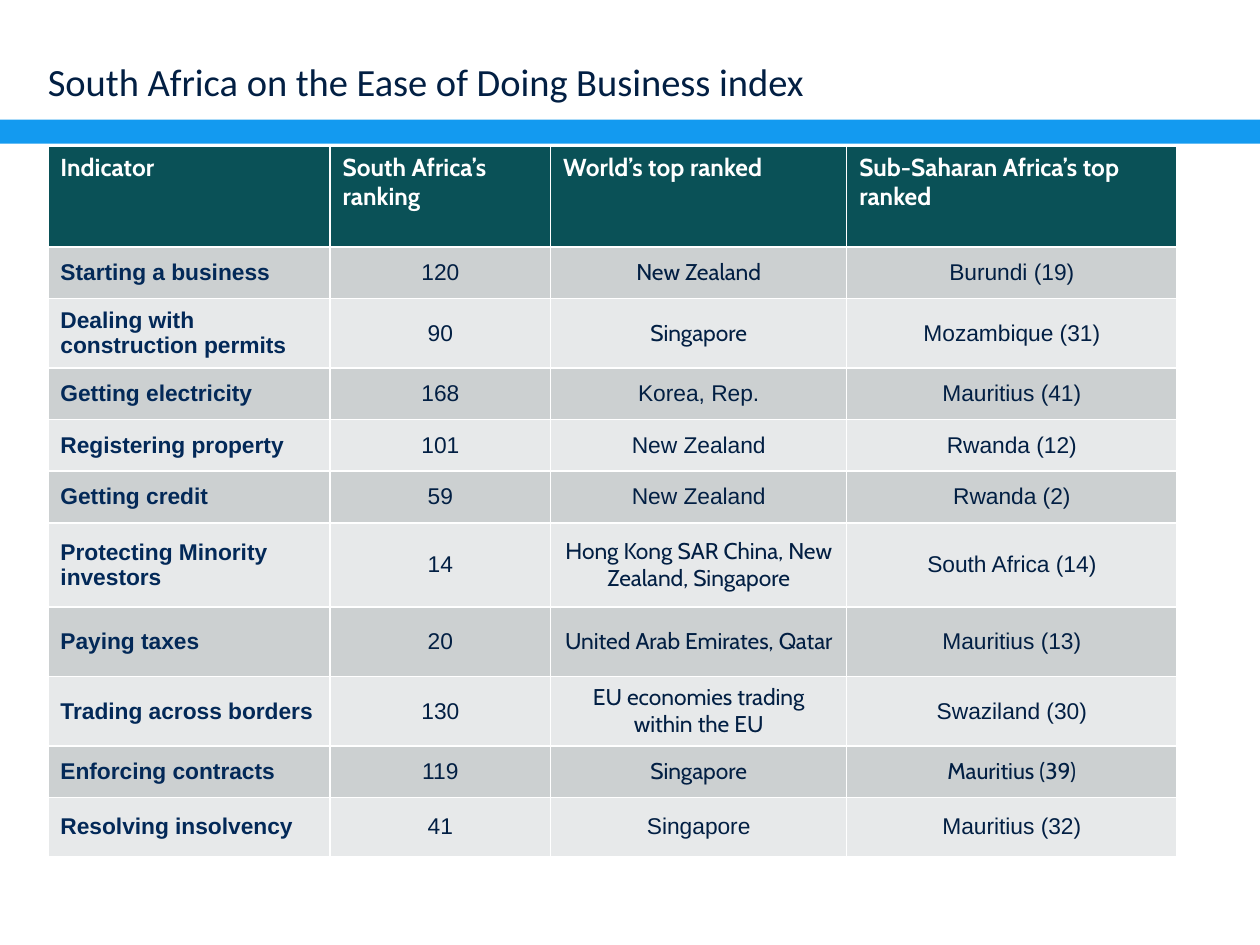
from pptx import Presentation
from pptx.dml.color import RGBColor
from pptx.enum.shapes import MSO_SHAPE
from pptx.enum.text import MSO_ANCHOR as Anchor, PP_ALIGN as Align
from pptx.util import Inches, Pt

NAVY = RGBColor(0x02, 0x1F, 0x43)
INDICATOR_BLUE = RGBColor(0x03, 0x29, 0x58)
BAND_BLUE = RGBColor(0x13, 0x9A, 0xF0)
TEAL = RGBColor(0x0A, 0x51, 0x57)
WHITE = RGBColor(0xFF, 0xFF, 0xFF)
STRIPES = [RGBColor(0xE7, 0xE9, 0xEA), RGBColor(0xCC, 0xD0, 0xD1)]

TITLE = "South Africa on the Ease of Doing Business index"
HEADINGS = ("Indicator", "South Africa’s ranking", "World’s top ranked",
            "Sub-Saharan Africa’s top ranked")
RANKINGS = [
    ("Starting a business", "120", "New Zealand", "Burundi (19)"),
    ("Dealing with construction permits", "90", "Singapore", "Mozambique (31)"),
    ("Getting electricity", "168", "Korea, Rep.", "Mauritius (41)"),
    ("Registering property", "101", "New Zealand", "Rwanda (12)"),
    ("Getting credit", "59", "New Zealand", "Rwanda (2)"),
    ("Protecting Minority investors", "14",
     "Hong Kong SAR China, New Zealand, Singapore", "South Africa (14)"),
    ("Paying taxes", "20", "United Arab Emirates, Qatar", "Mauritius (13)"),
    ("Trading across borders", "130", "EU economies trading within the EU",
     "Swaziland (30)"),
    ("Enforcing contracts", "119", "Singapore", "Mauritius (39)"),
    ("Resolving insolvency", "41", "Singapore", "Mauritius (32)"),
]
CABIN_CELLS = {(1, 2), (2, 2), (6, 2), (7, 2), (8, 2), (9, 2), (9, 3)}
COLUMN_WIDTHS = [2.24, 1.75, 2.35, 2.62]
ROW_HEIGHTS = [0.8, 0.41, 0.55, 0.41, 0.41, 0.41, 0.67, 0.55, 0.55, 0.41, 0.47]
MARGIN = 0.38


def set_font(paragraph, name, size, color, bold=False):
    font = paragraph.font
    font.name, font.size, font.bold = name, Pt(size), bold
    font.color.rgb = color


def fill_cell(cell, text, row, column):
    cell.text = text
    paragraph = cell.text_frame.paragraphs[0]
    cell.fill.solid()
    if row == 0:
        cell.fill.fore_color.rgb = TEAL
        set_font(paragraph, "Cabin", 14, WHITE, True)
        return
    cell.fill.fore_color.rgb = STRIPES[row % 2]
    cell.vertical_anchor = Anchor.MIDDLE
    if column == 0:
        set_font(paragraph, "Arial", 13, INDICATOR_BLUE, True)
    else:
        paragraph.alignment = Align.CENTER
        face = "Cabin" if (row, column) in CABIN_CELLS else "Arial"
        set_font(paragraph, face, 13, NAVY)


prs = Presentation()
prs.slide_width, prs.slide_height = Inches(10), Inches(7.5)
slide = prs.slides.add_slide(prs.slide_layouts[6])

band = slide.shapes.add_shape(MSO_SHAPE.RECTANGLE, 0, Inches(0.95),
                              prs.slide_width, Inches(0.19))
band.shadow.inherit = False
band.fill.solid()
band.fill.fore_color.rgb = BAND_BLUE
band.line.fill.background()

title = slide.shapes.add_textbox(Inches(MARGIN), 0, Inches(9.25), Inches(0.83)).text_frame
title.word_wrap = True
title.vertical_anchor = Anchor.BOTTOM
title.margin_left = title.margin_right = title.margin_top = title.margin_bottom = 0
title.text = TITLE
set_font(title.paragraphs[0], "Calibri", 22, NAVY)

table = slide.shapes.add_table(
    len(ROW_HEIGHTS), len(COLUMN_WIDTHS), Inches(MARGIN), Inches(1.16),
    Inches(sum(COLUMN_WIDTHS)), Inches(sum(ROW_HEIGHTS))).table
table.horz_banding = False
for table_column, width in zip(table.columns, COLUMN_WIDTHS):
    table_column.width = Inches(width)
for table_row, height in zip(table.rows, ROW_HEIGHTS):
    table_row.height = Inches(height)
for row, texts in enumerate([HEADINGS, *RANKINGS]):
    for column, text in enumerate(texts):
        fill_cell(table.cell(row, column), text, row, column)

prs.save("out.pptx")
